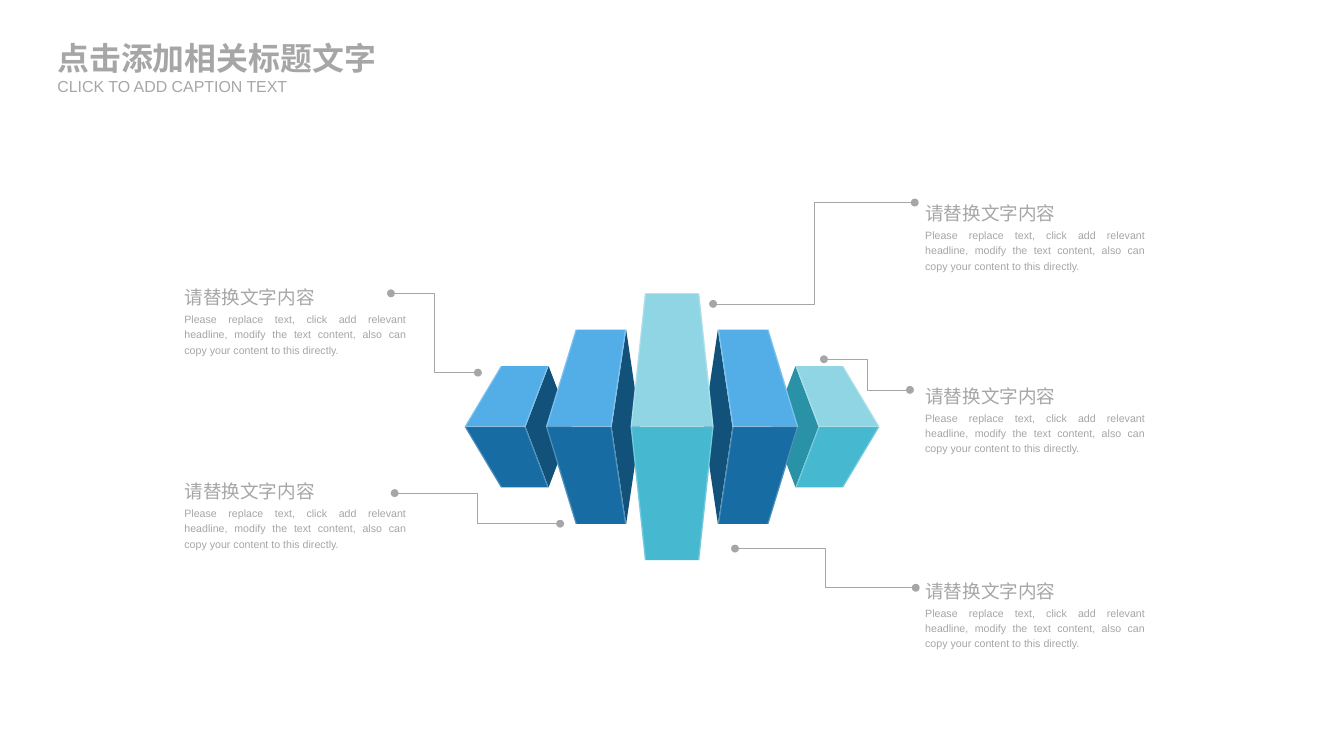
from dataclasses import dataclass

from lxml.etree import SubElement
from pptx import Presentation
from pptx.dml.color import RGBColor as RGB
from pptx.enum.shapes import MSO_CONNECTOR as Link
from pptx.enum.text import MSO_ANCHOR as Anchor, MSO_AUTO_SIZE as AutoSize, PP_ALIGN as Align
from pptx.oxml.ns import qn
from pptx.util import Inches, Pt


@dataclass(frozen=True)
class Theme:
    font: str = "Arial"
    grey: str = "A6A6A6"
    sheen: str = "FFFFFF"
    sheen_alpha: int = 25
    # Side, upper and lower face of a block
    blue: tuple = ("11517A", "53AEE8", "166CA3")
    teal: tuple = ("2A92A6", "90D5E3", "46B9D0")
    title_size: int = 24
    subtitle_size: int = 12
    heading_size: int = 14
    body_size: int = 8
    leader_width: float = 0.5


@dataclass(frozen=True)
class Box:
    """A region whose contents are given in percent of its width and height."""
    left: float
    top: float
    width: float
    height: float

    def point(self, x, y):
        return (round(self.left + self.width * x / 100),
                round(self.top + self.height * y / 100))

    def area(self, x, y, width, height):
        return Box(*self.point(x, y), round(self.width * width / 100),
                   round(self.height * height / 100))


THEME = Theme()
HEADING = "请替换文字内容"
BODY = ("Please replace text, click add relevant headline, modify the text content, "
        "also can copy your content to this directly.")

# Callouts: left, top, width of the text, then both ends of the leader
CALLOUTS = [
    (13.02, 36.66, 17.92, (35.56, 49.3), (29.09, 38.81)),
    (13.02, 62.33, 17.92, (41.68, 69.28), (29.37, 65.23)),
    (68.14, 25.54, 17.78, (68.07, 26.8), (53.06, 40.2)),
    (68.14, 49.68, 17.78, (67.71, 51.58), (61.31, 47.53)),
    (68.14, 75.47, 17.78, (68.14, 77.75), (54.69, 72.57)),
]

# Blocks, in percent of half the fan, measured from its centre:
# tip, outer top, seam, inner top, hidden side, rise
OUTER = (100, 82.5, 70.6, 59.5, 48.4, 45.5)
INNER = (60.8, 46.5, 29.1, 22.1, 15.2, 72.8)
CENTRE_TIP, CENTRE_TOP, CENTRE_RISE = 20, 13.1, 100
SHEEN_WIDTH, SHEEN_HEIGHT = 0.6, 0.4


def apply(target, formats):
    for name, value in formats.items():
        setattr(target, name, value)


def write(holder, words, size, bold=False, paragraph_format=None, frame_format=None):
    frame = holder.text_frame
    apply(frame, {"word_wrap": True, "auto_size": AutoSize.NONE,
                  "vertical_anchor": Anchor.TOP, **(frame_format or {})})
    paragraph = frame.paragraphs[0]
    apply(paragraph, {"alignment": Align.LEFT, **(paragraph_format or {})})
    run = paragraph.add_run()
    run.text = words
    apply(run.font, {"name": THEME.font, "size": Pt(size), "bold": bold})
    run.font.color.rgb = RGB.from_string(THEME.grey)


def add_text(slide, box, words, size, **formats):
    holder = slide.shapes.add_textbox(box.left, box.top, box.width, box.height)
    write(holder, words, size, **formats)


def add_face(slide, fan, corners, colour, alpha=None):
    points = [fan.point(50 + x / 2, 50 + y / 2) for x, y in corners]
    outline = slide.shapes.build_freeform(*points[0], scale=1.0)
    outline.add_line_segments(points[1:], close=True)
    face = outline.convert_to_shape()
    face.shadow.inherit = False
    face.fill.solid()
    face.fill.fore_color.rgb = RGB.from_string(colour)
    face.line.fill.background()
    if alpha is not None:
        tint = face.element.spPr.find(".//" + qn("a:srgbClr"))
        SubElement(tint, qn("a:alpha")).set("val", str(alpha * 1000))


def add_block(slide, fan, side, block, colours):
    tip, outer_top, seam, inner_top, hidden, rise = (side * x for x in block)
    rise = abs(rise)
    dark, upper, lower = colours
    add_face(slide, fan, [(seam, 0), (inner_top, -rise), (hidden, 0), (inner_top, rise)], dark)
    for height, colour in ((-rise, upper), (rise, lower)):
        add_face(slide, fan, [(seam, 0), (inner_top, height), (outer_top, height), (tip, 0)],
                 colour)


def add_edge_sheen(slide, fan, tip, top, rise, shift):
    edge = [(top, -rise), (tip, 0), (top, rise)]
    inside = [(x + shift, y) for x, y in reversed(edge)]
    add_face(slide, fan, edge + inside, THEME.sheen, THEME.sheen_alpha)


def add_flat_sheen(slide, fan, start, end):
    band = [(start, -SHEEN_HEIGHT), (end, -SHEEN_HEIGHT),
            (end, SHEEN_HEIGHT), (start, SHEEN_HEIGHT)]
    add_face(slide, fan, band, THEME.sheen, THEME.sheen_alpha)


def add_fan(slide, fan):
    # Side blocks, from the outside in
    for side, outer_colours in ((-1, THEME.blue), (1, THEME.teal)):
        add_block(slide, fan, side, OUTER, outer_colours)
        add_block(slide, fan, side, INNER, THEME.blue)
    # Centre block
    for rise, colour in zip((-CENTRE_RISE, CENTRE_RISE), THEME.teal[1:]):
        add_face(slide, fan, [(-CENTRE_TIP, 0), (-CENTRE_TOP, rise),
                              (CENTRE_TOP, rise), (CENTRE_TIP, 0)], colour)
    # Light along the edges
    add_flat_sheen(slide, fan, -CENTRE_TIP, CENTRE_TIP)
    for side in (-1, 1):
        shift = side * SHEEN_WIDTH
        for tip, outer_top, seam, inner_top, _, rise in (OUTER, INNER):
            add_flat_sheen(slide, fan, side * seam, side * tip)
            add_edge_sheen(slide, fan, side * tip, side * outer_top, rise, -shift)
            add_edge_sheen(slide, fan, side * seam, side * inner_top, rise, shift)
        add_edge_sheen(slide, fan, side * CENTRE_TIP, side * CENTRE_TOP, CENTRE_RISE, -shift)


def add_leader(slide, start, end):
    leader = slide.shapes.add_connector(Link.ELBOW, *start, *end)
    leader.line.width = Pt(THEME.leader_width)
    leader.line.color.rgb = RGB.from_string(THEME.grey)
    stroke = leader.element.spPr.find(qn("a:ln"))
    for arrowhead in ("a:headEnd", "a:tailEnd"):
        SubElement(stroke, qn(arrowhead)).set("type", "oval")
    SubElement(leader.element.spPr, qn("a:effectLst"))


def add_callout(slide, box):
    justified = {"alignment": Align.JUSTIFY, "line_spacing": 1.2}
    add_text(slide, box.area(0, 34.5, 100, 65.5), BODY, THEME.body_size,
             paragraph_format=justified)
    add_text(slide, box.area(0, 0, 65.4, 41.4), HEADING, THEME.heading_size,
             paragraph_format=justified)


def add_header(slide, box):
    flush = {f"margin_{edge}": 0 for edge in ("left", "top", "right", "bottom")}
    title_box = box.area(0, 0, 100, 66.67)
    title = slide.shapes.title
    apply(title, {"left": title_box.left, "top": title_box.top,
                  "width": title_box.width, "height": title_box.height})
    write(title, "点击添加相关标题文字", THEME.title_size, bold=True,
          frame_format={**flush, "vertical_anchor": Anchor.MIDDLE})
    add_text(slide, box.area(0, 66.67, 82, 33.33), "CLICK TO ADD CAPTION TEXT",
             THEME.subtitle_size, frame_format=flush)


def main():
    deck = Presentation()
    deck.slide_width, deck.slide_height = Inches(14.06), Inches(7.91)
    page = Box(0, 0, deck.slide_width, deck.slide_height)
    slide = deck.slides.add_slide(deck.slide_layouts[5])

    add_header(slide, page.area(4.27, 5.06, 25.04, 7.59))
    add_fan(slide, page.area(34.57, 38.81, 30.87, 35.27))
    for left, top, width, start, end in CALLOUTS:
        add_callout(slide, page.area(left, top, width, 11))
        add_leader(slide, page.point(*start), page.point(*end))

    deck.save("out.pptx")


if __name__ == "__main__":
    main()
